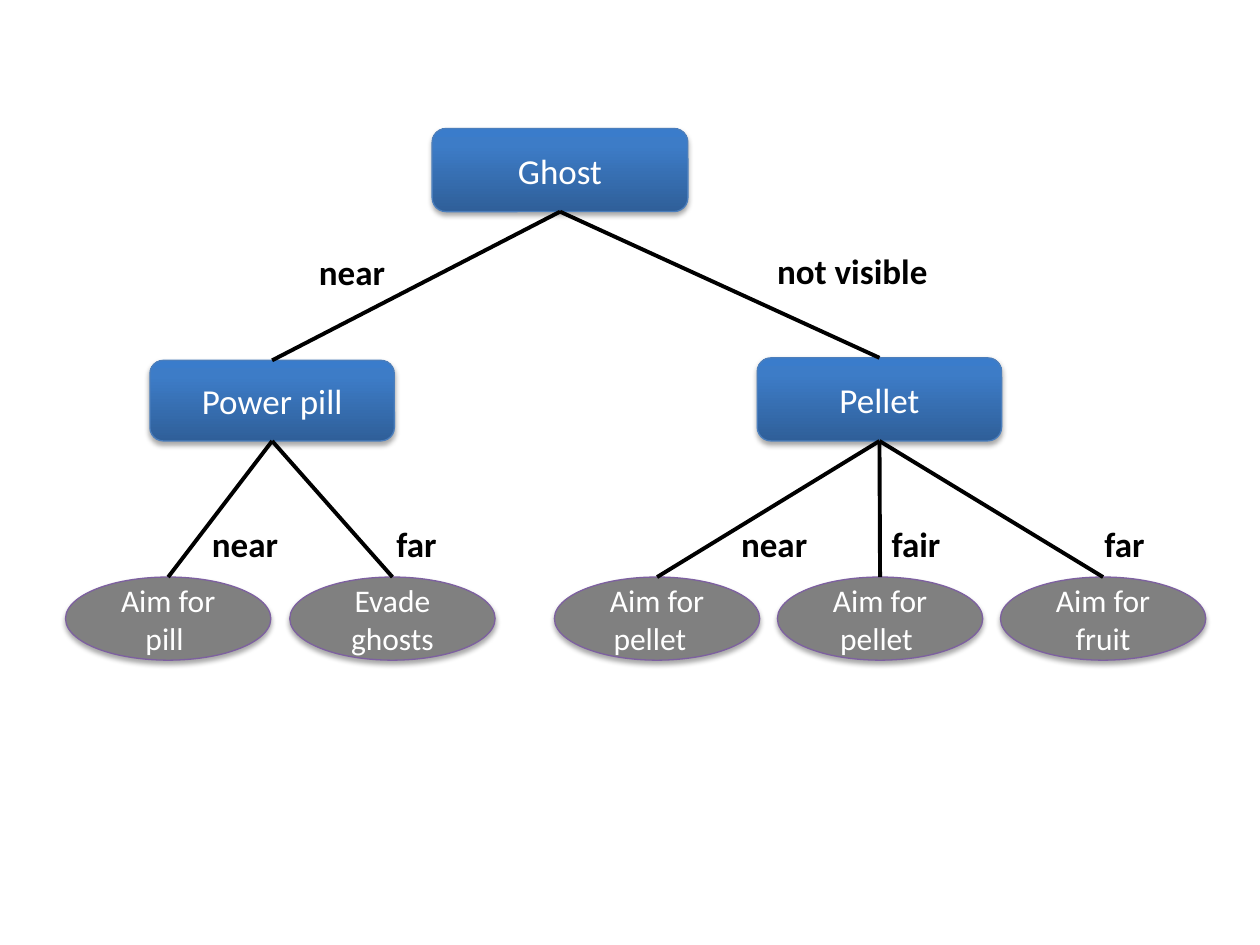
from copy import deepcopy

from lxml.etree import SubElement
from pptx import Presentation
from pptx.dml.color import RGBColor
from pptx.enum.shapes import MSO_CONNECTOR, MSO_SHAPE
from pptx.enum.text import MSO_ANCHOR, PP_ALIGN
from pptx.oxml.ns import qn
from pptx.util import Inches, Pt

COLORS = {
    "text": "000000",
    "node_text": "FFFFFF",
    "branch": "000000",
    "leaf": "808080",
    "leaf_line": "7D60A0",
    "decision_line": "4B7EBC",
    "shadow": "000000",
}
DECISION_GRADIENT = [(0, "2F5F99"), (0.8, "3D7CC7"), (1, "3A7CCB")]
TOP, BOTTOM = 0, 2  # connection sites
LEAF_TOP, LEAF_WIDTH, LEAF_HEIGHT = 4.58, 1.63, 0.66


def write_text(box, text, size, color, bold=False, wrap=True, anchor=MSO_ANCHOR.MIDDLE):
    frame = box.text_frame
    frame.word_wrap = wrap
    frame.vertical_anchor = anchor
    para = frame.paragraphs[0]
    para.alignment = PP_ALIGN.CENTER
    span = para.add_run()
    span.text = text
    span.font.name = "Calibri"
    span.font.size = Pt(size)
    span.font.bold = bold
    span.font.color.rgb = RGBColor.from_string(COLORS[color])


def add_node(page, preset, place, text, size, line_color):
    """Add an outlined shape with a soft shadow below it and centred text."""
    node = page.shapes.add_shape(preset, *[Inches(length) for length in place])
    node.line.color.rgb = RGBColor.from_string(COLORS[line_color])
    node.line.width = Pt(0.75)
    node.shadow.inherit = False
    effects = node._element.spPr.find(qn("a:effectLst"))
    shadow = SubElement(effects, qn("a:outerShdw"), blurRad=str(Pt(3.1)),
                        dist=str(Pt(1.8)), dir="5400000", rotWithShape="0")
    tint = SubElement(shadow, qn("a:srgbClr"), val=COLORS["shadow"])
    SubElement(tint, qn("a:alpha"), val="35000")
    write_text(node, text, size, "node_text")
    return node


deck = Presentation()
deck.slide_width, deck.slide_height = Inches(10), Inches(7.5)
page = deck.slides.add_slide(deck.slide_layouts[6])

# Branch labels: text, left, top, width
labels = [
    ("near", 2.43, 1.94, 0.73),
    ("not visible", 6.06, 1.93, 1.41),
    ("near", 1.58, 4.1, 0.73),
    ("far", 3.04, 4.1, 0.53),
    ("near", 5.78, 4.1, 0.73),
    ("fair", 6.97, 4.1, 0.6),
    ("far", 8.66, 4.1, 0.53),
]
for text, left, top, width in labels:
    label = page.shapes.add_textbox(Inches(left), Inches(top), Inches(width), Inches(0.44))
    write_text(label, text, 20, "text", bold=True, wrap=False, anchor=MSO_ANCHOR.TOP)

nodes = {}

decisions = [
    ("Ghost", (3.43, 1.02, 2.03, 0.66)),
    ("Power pill", (1.19, 2.86, 1.94, 0.64)),
    ("Pellet", (6.01, 2.84, 1.94, 0.66)),
]
for text, place in decisions:
    node = add_node(page, MSO_SHAPE.ROUNDED_RECTANGLE, place, text, 20, "decision_line")
    node.fill.gradient()
    node.fill.gradient_angle = 90
    stop_list = node._element.spPr.find(qn("a:gradFill")).find(qn("a:gsLst"))
    stop_list.append(deepcopy(stop_list[-1]))
    for stop, (position, color) in zip(node.fill.gradient_stops, DECISION_GRADIENT):
        stop.position = position
        stop.color.rgb = RGBColor.from_string(color)
    nodes[text] = node

# Leaves: key, text, left
leaves = [
    ("pill", "Aim for pill ", 0.52),
    ("ghosts", "Evade ghosts", 2.3),
    ("near pellet", "Aim for pellet  ", 4.4),
    ("fair pellet", "Aim for pellet ", 6.17),
    ("fruit", "Aim for fruit", 7.94),
]
for key, text, left in leaves:
    place = (left, LEAF_TOP, LEAF_WIDTH, LEAF_HEIGHT)
    node = add_node(page, MSO_SHAPE.OVAL, place, text, 18, "leaf_line")
    node.fill.solid()
    node.fill.fore_color.rgb = RGBColor.from_string(COLORS["leaf"])
    nodes[key] = node

tree = {
    "Ghost": ["Power pill", "Pellet"],
    "Power pill": ["pill", "ghosts"],
    "Pellet": ["near pellet", "fair pellet", "fruit"],
}
for parent, children in tree.items():
    for child in children:
        branch = page.shapes.add_connector(MSO_CONNECTOR.STRAIGHT, 0, 0, 0, 0)
        branch.begin_connect(nodes[parent], BOTTOM)
        branch.end_connect(nodes[child], TOP)
        branch.line.color.rgb = RGBColor.from_string(COLORS["branch"])
        branch.line.width = Pt(2.25)
        SubElement(branch._element.spPr, qn("a:effectLst"))

deck.save("out.pptx")
